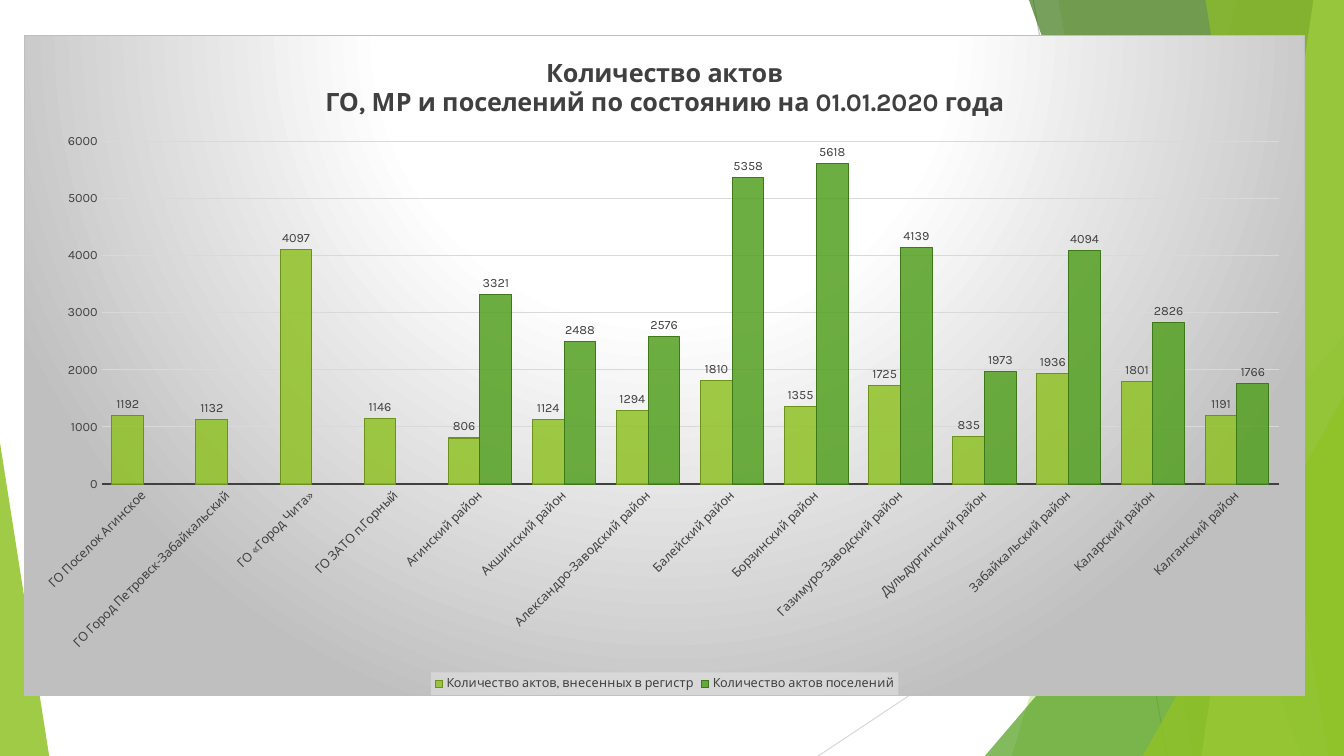
from lxml import etree
from pptx import Presentation
from pptx.chart.data import CategoryChartData
from pptx.dml.color import RGBColor
from pptx.enum.chart import XL_CHART_TYPE, XL_LABEL_POSITION, XL_LEGEND_POSITION, XL_TICK_MARK
from pptx.enum.shapes import MSO_CONNECTOR, MSO_SHAPE
from pptx.oxml import parse_xml
from pptx.oxml.ns import qn
from pptx.util import Cm, Pt

COLUMN = XL_CHART_TYPE.COLUMN_CLUSTERED
OUTSIDE = XL_LABEL_POSITION.OUTSIDE_END
BOTTOM = XL_LEGEND_POSITION.BOTTOM
NO_TICK = XL_TICK_MARK.NONE
STRAIGHT = MSO_CONNECTOR.STRAIGHT
TRIANGLE = MSO_SHAPE.ISOSCELES_TRIANGLE

FONT = "Karla"
WIDTH, HEIGHT = 33.87, 19.05
COLORS = {
    "lime": "90C226", "green": "54A021", "forest": "3F7819", "pale": "C0E474",
    "olive": "6C921D", "text": "404040", "grid": "D9D9D9", "edge": "BFBFBF",
    "legend": "F2F2F2", "white": "FFFFFF",
}
NS = ('xmlns:a="http://schemas.openxmlformats.org/drawingml/2006/main" '
      'xmlns:c="http://schemas.openxmlformats.org/drawingml/2006/chart"')

TITLE = ["Количество актов", "ГО, МР и поселений по состоянию на 01.01.2020 года"]
ACTS = [
    ("ГО Поселок Агинское", 1192, None),
    ("ГО Город Петровск-Забайкальский", 1132, None),
    ("ГО «Город Чита»", 4097, None),
    ("ГО ЗАТО п.Горный", 1146, None),
    ("Агинский район", 806, 3321),
    ("Акшинский район", 1124, 2488),
    ("Александро-Заводский район", 1294, 2576),
    ("Балейский район", 1810, 5358),
    ("Борзинский район", 1355, 5618),
    ("Газимуро-Заводский район", 1725, 4139),
    ("Дульдургинский район", 835, 1973),
    ("Забайкальский район", 1936, 4094),
    ("Каларский район", 1801, 2826),
    ("Калганский район", 1191, 1766),
]
SERIES = [
    ("Количество актов, внесенных в регистр", "lime", "olive"),
    ("Количество актов поселений", "green", "forest"),
]


def rgb(name):
    return RGBColor.from_string(COLORS[name])


def set_font(font, size=9, color="text", bold=False):
    font.name = FONT
    font.size = Pt(size)
    font.bold = bold
    font.color.rgb = rgb(color)


def set_line(line, color, width=0.75):
    line.color.rgb = rgb(color)
    line.width = Pt(width)


def set_fill(fill, element, color, opacity):
    fill.solid()
    fill.fore_color.rgb = rgb(color)
    clr = next(element.iter(qn("a:srgbClr")))
    etree.SubElement(clr, qn("a:alpha")).set("val", str(opacity * 1000))


def add_text(tf, lines, **fmt):
    for i, line in enumerate(lines):
        p = tf.paragraphs[0] if i == 0 else tf.add_paragraph()
        r = p.add_run()
        r.text = line
        set_font(r.font, **fmt)


def add_facet(s, shape, color, opacity):
    set_fill(shape.fill, shape._element.spPr, color, opacity)
    shape.line.fill.background()
    shape.shadow.inherit = False


def add_band(s, top, bottom, color, opacity):
    builder = s.shapes.build_freeform(Cm(top), 0)
    corners = [(WIDTH, 0), (WIDTH, HEIGHT), (bottom, HEIGHT)]
    builder.add_line_segments([(Cm(x), Cm(y)) for x, y in corners], close=True)
    add_facet(s, builder.convert_to_shape(), color, opacity)


def add_corner(s, x, width, height, apex, color, opacity):
    sp = s.shapes.add_shape(TRIANGLE, Cm(x), Cm(HEIGHT - height), Cm(width), Cm(height))
    sp.adjustments[0] = apex
    add_facet(s, sp, color, opacity)


def add_thin_line(s, x1, y1, x2, y2, color):
    line = s.shapes.add_connector(STRAIGHT, Cm(x1), Cm(y1), Cm(x2), Cm(y2))
    set_line(line.line, color)
    etree.SubElement(line._element.spPr, qn("a:effectLst"))


def add_backdrop(s):
    add_thin_line(s, 26.04, 0, 29.41, HEIGHT, "edge")
    add_thin_line(s, WIDTH, 10.24, 20.62, HEIGHT, "grid")
    add_band(s, 31.19, 25.5, "lime", 30)
    add_band(s, 26.67, 30.05, "lime", 20)
    add_corner(s, 24.82, 9.05, 10.59, 1, "green", 72)
    add_band(s, 25.93, 32.79, "forest", 70)
    add_band(s, 33.1, 30.28, "pale", 70)
    add_band(s, 30.38, 33.48, "lime", 65)
    add_corner(s, 28.8, 5.07, 9.07, 1, "lime", 80)
    add_corner(s, 0, 1.24, 7.9, 0, "lime", 85)


def format_axes(chart):
    cat, val = chart.category_axis, chart.value_axis
    for axis in (cat, val):
        axis.major_tick_mark = axis.minor_tick_mark = NO_TICK
        set_font(axis.tick_labels.font)
    set_line(cat.format.line, "text", 1.5)
    cat._element.find(qn("c:txPr")).find(qn("a:bodyPr")).set("rot", "-2700000")
    val.minimum_scale, val.maximum_scale, val.major_unit = 0, 6000, 1000
    val.format.line.fill.background()
    set_line(val.major_gridlines.format.line, "grid")


def format_series(plot):
    plot.gap_width, plot.overlap, plot.vary_by_categories = 65, 0, False
    for series, (_, fill, line) in zip(plot.series, SERIES):
        series.invert_if_negative = False
        set_fill(series.format.fill, series._element, fill, 85)
        set_line(series.format.line, line)
        labels = series.data_labels
        labels.show_value = True
        labels.position = OUTSIDE
        set_font(labels.font)


def format_legend(chart):
    chart.has_legend = True
    legend = chart.legend
    legend.position = BOTTOM
    legend.include_in_layout = False
    set_font(legend.font)
    legend._element.find(qn("c:txPr")).addprevious(parse_xml(
        f'<c:spPr {NS}><a:solidFill><a:srgbClr val="{COLORS["legend"]}">'
        '<a:alpha val="39000"/></a:srgbClr></a:solidFill></c:spPr>'))


def format_area(chart):
    stops = [(0, "white"), (39, "white"), (100, "edge")]
    gs = "".join(f'<a:gs pos="{pos * 1000}"><a:srgbClr val="{COLORS[c]}"/></a:gs>'
                 for pos, c in stops)
    chart._chartSpace.find(qn("c:chart")).addnext(parse_xml(
        f'<c:spPr {NS}><a:gradFill><a:gsLst>{gs}</a:gsLst><a:path path="circle">'
        '<a:fillToRect l="50000" t="-80000" r="50000" b="180000"/></a:path></a:gradFill>'
        f'<a:ln w="9525"><a:solidFill><a:srgbClr val="{COLORS["edge"]}"/></a:solidFill></a:ln>'
        '</c:spPr>'))


def place_plot(chart, x, y, w, h):
    area = next(chart._chartSpace.iter(qn("c:plotArea")))
    for old in area.findall(qn("c:layout")):
        area.remove(old)
    sizes = "".join(f'<c:{k} val="{v}"/>' for k, v in zip("xywh", (x, y, w, h)))
    area.insert(0, parse_xml(
        f'<c:layout {NS}><c:manualLayout><c:layoutTarget val="inner"/>'
        f'<c:xMode val="edge"/><c:yMode val="edge"/>{sizes}</c:manualLayout></c:layout>'))


def add_acts_chart(s, x, y, w, h):
    data = CategoryChartData()
    names, *values = zip(*ACTS)
    data.categories = names
    for (name, _, _), vals in zip(SERIES, values):
        data.add_series(name, vals)
    chart = s.shapes.add_chart(COLUMN, Cm(x), Cm(y), Cm(w), Cm(h), data).chart
    set_font(chart.font, size=10)
    chart.has_title = True
    add_text(chart.chart_title.text_frame, TITLE, size=18, bold=True)
    format_axes(chart)
    format_series(chart.plots[0])
    format_legend(chart)
    format_area(chart)
    place_plot(chart, 0.06, 0.16, 0.92, 0.52)


def main():
    prs = Presentation()
    prs.slide_width, prs.slide_height = Cm(WIDTH), Cm(HEIGHT)
    s = prs.slides.add_slide(prs.slide_layouts[6])
    add_backdrop(s)
    add_acts_chart(s, 0.61, 0.89, 32.28, 16.64)
    prs.save("out.pptx")


if __name__ == "__main__":
    main()
